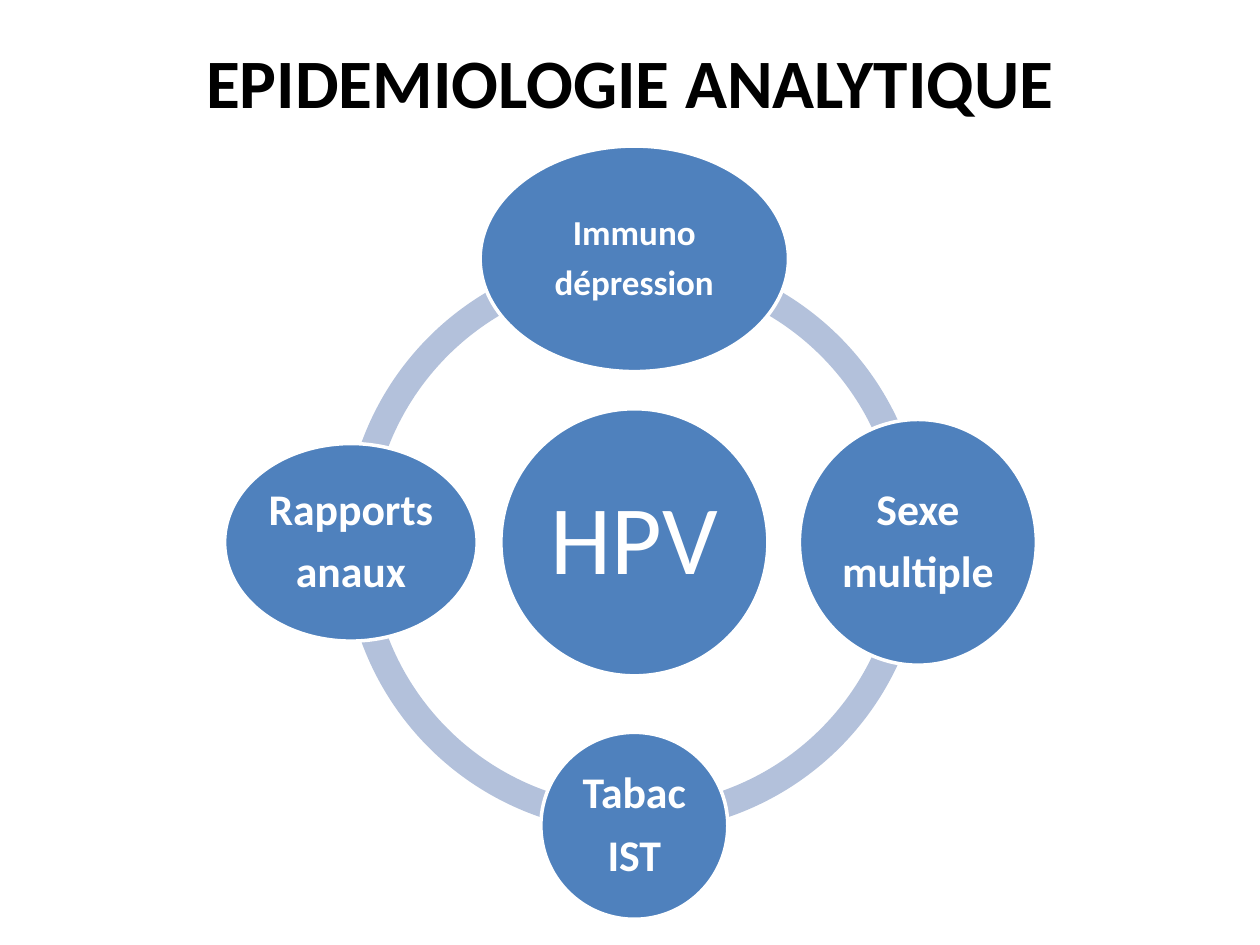
from typing import NamedTuple

from pptx import Presentation
from pptx.dml.color import RGBColor
from pptx.enum.shapes import MSO_SHAPE as Kind
from pptx.enum.text import MSO_ANCHOR as Anchor, PP_ALIGN as Align
from pptx.util import Pt

BLUE = RGBColor(0x4F, 0x81, 0xBD)
PALE = RGBColor(0xB3, 0xC1, 0xDB)
WHITE = RGBColor(0xFF, 0xFF, 0xFF)
BLACK = RGBColor(0, 0, 0)
FONT = "Calibri"

MID_X, MID_Y = 362.5, 309.9
RING = 332
ORBIT = 162


class Disc(NamedTuple):
    text: str
    dx: int  # direction from the hub
    dy: int
    width: float
    height: float
    size: int = 25
    bold: bool = True
    inset: float = 2.2


DISCS = [
    Disc("HPV", 0, 0, 152.6, 152.6, 56, False, 5.6),
    Disc("Immuno\ndépression", 0, -1, 176.2, 128.9, 20),
    Disc("Sexe\nmultiple", 1, 0, 135.4, 140.4),
    Disc("Tabac\nIST", 0, 1, 106.8, 106.8),
    Disc("Rapports\nanaux", -1, 0, 144.3, 112.9),
]


def add_shape(slide, kind: Kind, x: float, y: float, w: float, h: float,
              fill: RGBColor):
    """Add a flat shape centred on x, y."""
    shape = slide.shapes.add_shape(
        kind, Pt(x - w / 2), Pt(y - h / 2), Pt(w), Pt(h))
    shape.shadow.inherit = False
    shape.fill.solid()
    shape.fill.fore_color.rgb = fill
    return shape


def style(font, size: float, bold: bool, color: RGBColor) -> None:
    font.name, font.size, font.bold = FONT, Pt(size), bold
    font.color.rgb = color


def add_arc(slide, start: int) -> None:
    """Add a quarter of the ring, clockwise from start degrees."""
    arc = add_shape(slide, Kind.BLOCK_ARC, MID_X, MID_Y, RING, RING, PALE)
    arc.line.fill.background()
    # Angles count 60000 to the degree, adjustments 100000 to the unit.
    arc.adjustments[0] = start * 0.6
    arc.adjustments[1] = (start + 90) % 360 * 0.6
    arc.adjustments[2] = 0.046


def add_disc(slide, disc: Disc) -> None:
    shape = add_shape(slide, Kind.OVAL, MID_X + disc.dx * ORBIT,
                      MID_Y + disc.dy * ORBIT, disc.width, disc.height, BLUE)
    shape.line.color.rgb = WHITE
    shape.line.width = Pt(2)
    frame = shape.text_frame
    frame.text = disc.text
    frame.word_wrap = True
    frame.vertical_anchor = Anchor.MIDDLE
    frame.margin_left = frame.margin_right = Pt(disc.inset)
    frame.margin_top = frame.margin_bottom = Pt(disc.inset)
    for para in frame.paragraphs:
        para.alignment = Align.CENTER
        para.line_spacing = 0.9
        for run in para.runs:
            style(run.font, disc.size, disc.bold, WHITE)
    for para in frame.paragraphs[:-1]:
        para.space_after = Pt(disc.size * 0.35)


def add_title(slide, text: str) -> None:
    title = slide.shapes.title
    title.left, title.top = Pt(36), Pt(21.6)
    title.width, title.height = Pt(648), Pt(49.7)
    frame = title.text_frame
    frame.text = text
    frame.vertical_anchor = Anchor.MIDDLE
    para = frame.paragraphs[0]
    para.alignment = Align.CENTER
    style(para.runs[0].font, 39.6, True, BLACK)


def main() -> None:
    deck = Presentation()
    deck.slide_width, deck.slide_height = Pt(720), Pt(540)
    slide = deck.slides.add_slide(deck.slide_layouts[5])
    add_title(slide, "EPIDEMIOLOGIE ANALYTIQUE")
    for start in (180, 90, 0, 270):
        add_arc(slide, start)
    for disc in DISCS:
        add_disc(slide, disc)
    deck.save("out.pptx")


if __name__ == "__main__":
    main()
